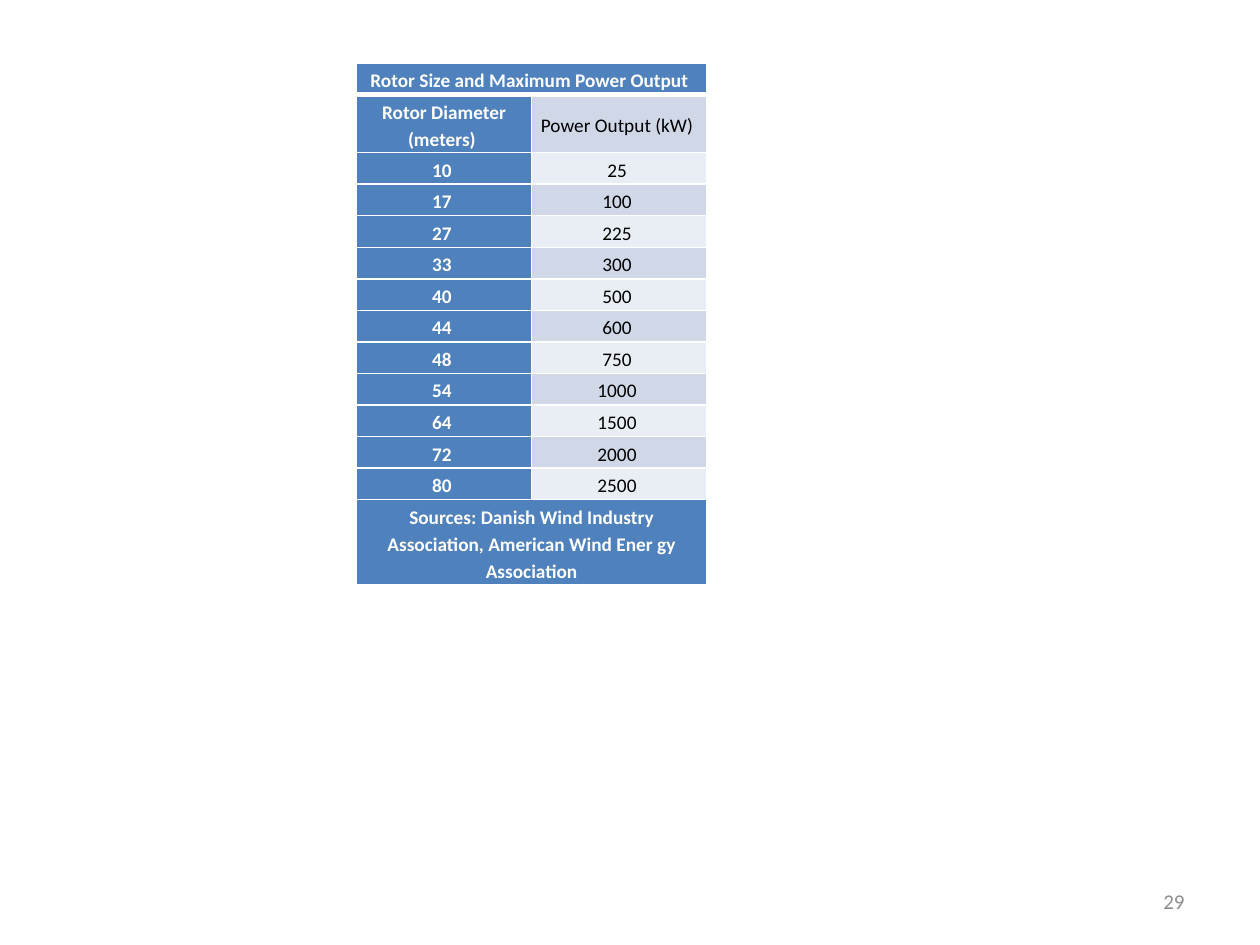
from lxml.etree import SubElement
from pptx import Presentation
from pptx.dml.color import RGBColor
from pptx.enum.text import MSO_ANCHOR as Anchor, PP_ALIGN as Align
from pptx.oxml.ns import qn
from pptx.util import Inches, Pt


def color(value):
    return RGBColor.from_string(value)


def write(frame, text, size=11, ink="000000", bold=False, align=Align.CENTER):
    frame.word_wrap = True
    para = frame.paragraphs[0]
    para.alignment = align
    span = para.add_run()
    span.text = text
    span.font.name = "Calibri"
    span.font.size = Pt(size)
    span.font.bold = bold
    span.font.color.rgb = color(ink)
    return para


deck = Presentation()
deck.slide_width = Inches(10)
deck.slide_height = Inches(7.5)
page = deck.slides.add_slide(deck.slide_layouts[6])

number_box = page.shapes.add_textbox(Inches(7.17), Inches(6.95), Inches(2.33), Inches(0.4))
number_box.text_frame.vertical_anchor = Anchor.MIDDLE
write(number_box.text_frame, "29", size=12, ink="8C8C8C", align=Align.RIGHT)

outputs = {10: 25, 17: 100, 27: 225, 33: 300, 40: 500, 44: 600,
           48: 750, 54: 1000, 64: 1500, 72: 2000, 80: 2500}
rows = [
    ("Rotor Size and Maximum Power Output ", ""),
    ("Rotor Diameter (meters) ", "Power Output (kW) "),
    *((f"{diameter} ", f"{power} ") for diameter, power in outputs.items()),
    ("Sources: Danish Wind Industry Association, American Wind Ener gy Association", ""),
]
last = len(rows) - 1

table = page.shapes.add_table(
    len(rows), 2, Inches(2.83), Inches(0.5), Inches(2.78), Inches(3.5)).table
for column in table.columns:
    column.width = Inches(1.39)
for row in table.rows:
    row.height = Inches(0.25)
for index in (0, last):
    table.cell(index, 0).merge(table.cell(index, 1))

for index, texts in enumerate(rows):
    for column, text in enumerate(texts):
        cell = table.cell(index, column)
        heading = column == 0 or index in (0, last)
        band = "D0D8E8" if index % 2 else "E9EDF4"
        cell.margin_left = cell.margin_right = Inches(0.02)
        cell.margin_top = cell.margin_bottom = Inches(0.02)
        cell.vertical_anchor = Anchor.MIDDLE
        if text:
            para = write(cell.text_frame, text, bold=heading,
                         ink="FFFFFF" if heading else "000000")
            para.line_spacing = 1.15
            para.space_after = Pt(10)
        properties = cell._tc.get_or_add_tcPr()
        for side in ("L", "R", "T", "B"):
            thick = (index, side) in ((0, "B"), (1, "T"))
            line = SubElement(properties, qn(f"a:ln{side}"), w=str(Pt(3 if thick else 1)))
            SubElement(SubElement(line, qn("a:solidFill")), qn("a:srgbClr"), val="FFFFFF")
        cell.fill.solid()
        cell.fill.fore_color.rgb = color("4F81BD" if heading else band)

deck.save("out.pptx")
